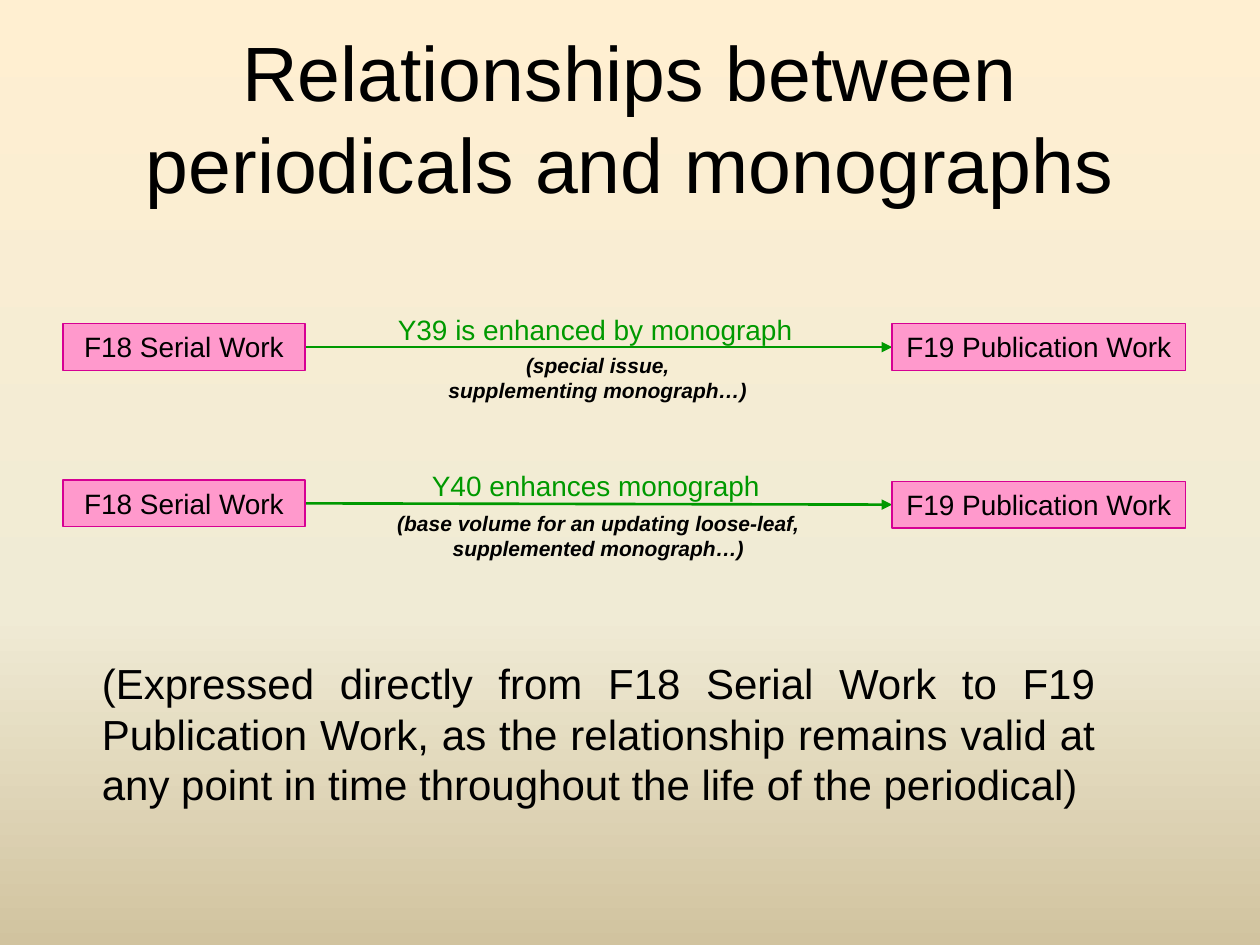
from copy import deepcopy

from pptx import Presentation
from pptx.dml.color import RGBColor
from pptx.enum import shapes, text
from pptx.oxml.ns import qn
from pptx.oxml.xmlchemy import OxmlElement
from pptx.util import Inches, Pt

BLACK, GREEN, PINK, MAGENTA = "000000", "009900", "FF99CC", "D60093"
LEFT, CENTER, JUSTIFY = text.PP_ALIGN.LEFT, text.PP_ALIGN.CENTER, text.PP_ALIGN.JUSTIFY
SERIAL_X, SERIAL_W = 0.5, 1.92
PUBLICATION_X, PUBLICATION_W = 7.08, 2.33
BOX_H = 0.37


def rgb(color):
    return RGBColor.from_string(color)


def set_background(s, stops):
    fill = s.background.fill
    fill.gradient()
    fill.gradient_angle = 270
    gs_list = fill._fill._gradFill.find(qn("a:gsLst"))
    gs_list.append(deepcopy(gs_list[-1]))
    for stop, (position, color) in zip(fill.gradient_stops, stops):
        stop.position = position
        stop.color.rgb = rgb(color)


def write(sp, content, size, color=BLACK, align=CENTER, emphasis=False, wrap=True):
    tf = sp.text_frame
    tf.word_wrap = wrap
    p = tf.paragraphs[0]
    p.text = content
    p.alignment = align
    for r in p.runs:
        r.font.name = "Arial"
        r.font.size = Pt(size)
        r.font.color.rgb = rgb(color)
        if emphasis:
            r.font.bold = r.font.italic = True
    for br in p._p.findall(qn("a:br")):
        br.append(deepcopy(p.runs[0]._r.rPr))
    return tf


def add_label(s, x, y, w, h, content, size, **style):
    sp = s.shapes.add_textbox(Inches(x), Inches(y), Inches(w), Inches(h))
    return write(sp, content, size, **style)


def add_box(s, x, y, w, content):
    sp = s.shapes.add_shape(shapes.MSO_SHAPE.RECTANGLE,
                            Inches(x), Inches(y), Inches(w), Inches(BOX_H))
    sp.shadow.inherit = False
    sp.fill.solid()
    sp.fill.fore_color.rgb = rgb(PINK)
    sp.line.color.rgb = rgb(MAGENTA)
    sp.line.width = Pt(0.75)
    tf = write(sp, content, 16)
    tf.vertical_anchor = text.MSO_ANCHOR.TOP


def add_arrow(s, tip_y, end_y):
    line = s.shapes.add_connector(shapes.MSO_CONNECTOR.STRAIGHT,
                                  Inches(PUBLICATION_X), Inches(tip_y),
                                  Inches(SERIAL_X + SERIAL_W), Inches(end_y))
    line.line.color.rgb = rgb(GREEN)
    line.line.width = Pt(1.5)
    head = OxmlElement("a:headEnd")
    head.set("type", "triangle")
    line.line._get_or_add_ln().append(head)
    line._element.spPr.append(OxmlElement("a:effectLst"))


def add_relationship(s, serial_y, publication_y, name, name_at, note, note_at):
    add_arrow(s, publication_y + BOX_H / 2, serial_y + BOX_H / 2)
    add_label(s, *name_at, BOX_H, name, 16, color=GREEN, align=LEFT, wrap=False)
    add_label(s, *note_at, 0.5, note, 12, emphasis=True)
    add_box(s, SERIAL_X, serial_y, SERIAL_W, "F18 Serial Work")
    add_box(s, PUBLICATION_X, publication_y, PUBLICATION_W, "F19 Publication Work")


def main():
    prs = Presentation()
    prs.slide_width, prs.slide_height = Inches(10), Inches(7.5)
    s = prs.slides.add_slide(prs.slide_layouts[6])
    set_background(s, [(0, "FFEFD1"), (0.65, "F0EBD5"), (1, "D1C39F")])
    title = add_label(s, 0.5, 0.3, 9, 1.25,
                      "Relationships between periodicals and monographs", 44)
    title.vertical_anchor = text.MSO_ANCHOR.MIDDLE
    add_relationship(s, 2.57, 2.57,
                     "Y39 is enhanced by monograph", (3.06, 2.43, 3.37),
                     "(special issue,\nsupplementing monograph…)", (3.38, 2.75, 2.73))
    add_relationship(s, 3.81, 3.82,
                     "Y40 enhances monograph", (3.33, 3.67, 2.83),
                     "(base volume for an updating loose-leaf,\nsupplemented monograph…)",
                     (2.92, 4, 3.66))
    add_label(s, 0.71, 5.17, 8.08, 1.31,
              "(Expressed directly from F18 Serial Work to F19 Publication Work, "
              "as the relationship remains valid at any point in time "
              "throughout the life of the periodical)", 24, align=JUSTIFY)
    prs.save("out.pptx")


if __name__ == "__main__":
    main()
